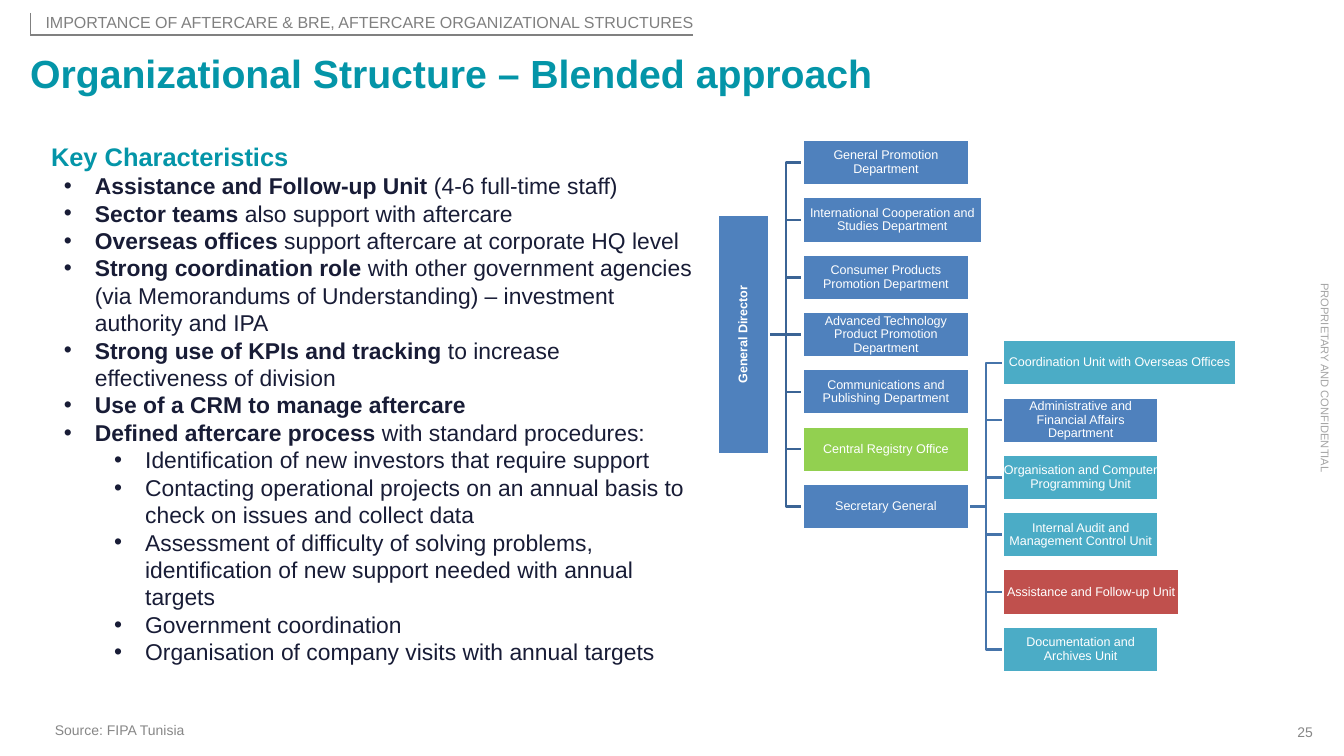
import pptx
import pptx.dml.color
import pptx.enum.shapes
import pptx.enum.text
import pptx.oxml
import pptx.oxml.ns
import pptx.util
from pptx.util import Inches

RGBColor = pptx.dml.color.RGBColor
Align = pptx.enum.text.PP_ALIGN
Anchor = pptx.enum.text.MSO_ANCHOR
Link = pptx.enum.shapes.MSO_CONNECTOR

TEAL = RGBColor(0x04, 0x95, 0xA8)
NAVY = RGBColor(0x18, 0x1C, 0x36)
GREY = RGBColor(0x80, 0x80, 0x80)
FOOT_GREY = RGBColor(0x87, 0x87, 0x87)
PALE_GREY = RGBColor(0xA5, 0xA5, 0xA5)
WHITE = RGBColor(0xFF, 0xFF, 0xFF)
BLUE = RGBColor(0x4F, 0x81, 0xBD)
GREEN = RGBColor(0x92, 0xD0, 0x50)
AQUA = RGBColor(0x4B, 0xAC, 0xC6)
RED = RGBColor(0xC0, 0x50, 0x4D)
DARK_LINK = RGBColor(0x3B, 0x64, 0x95)
LIGHT_LINK = RGBColor(0x46, 0x74, 0xAA)

TOP, BOX_HEIGHT = 1.53, 0.5
PITCH = (5.29 - TOP) / 6
DIRECTOR_HEIGHT = 2.63

CHARACTERISTICS = [
    ("Assistance and Follow-up Unit ", "(4-6 full-time staff)"),
    ("Sector teams ", "also support with aftercare"),
    ("Overseas offices ", "support aftercare at corporate HQ level"),
    ("Strong coordination role ", "with other government agencies (via Memorandums of "
     "Understanding) – investment authority and IPA"),
    ("Strong use of KPIs and tracking ", "to increase effectiveness of division"),
    ("Use of a CRM to manage aftercare", ""),
    ("Defined aftercare process ", "with standard procedures:"),
]
PROCEDURES = [
    "Identification of new investors that require support",
    "Contacting operational projects on an annual basis to check on issues and collect data",
    "Assessment of difficulty of solving problems, identification of new support needed "
    "with annual targets",
    "Government coordination",
    "Organisation of company visits with annual targets",
]
DEPARTMENTS = [
    ("General Promotion Department", 1.82, BLUE),
    ("International Cooperation and Studies Department", 1.96, BLUE),
    ("Consumer Products Promotion Department", 1.82, BLUE),
    ("Advanced Technology Product Promotion Department", 1.82, BLUE),
    ("Communications and Publishing Department", 1.82, BLUE),
    ("Central Registry Office", 1.82, GREEN),
    ("Secretary General", 1.82, BLUE),
]
UNITS = [
    ("Coordination Unit with Overseas Offices", 2.55, AQUA),
    ("Administrative and Financial Affairs Department", 1.7, BLUE),
    ("Organisation and Computer Programming Unit", 1.7, AQUA),
    ("Internal Audit and Management Control Unit", 1.7, AQUA),
    ("Assistance and Follow-up Unit", 1.93, RED),
    ("Documentation and Archives Unit", 1.7, AQUA),
]


class Painter:
    font = "Arial"

    def __init__(self, page):
        self.page = page

    def span(self, para, text, size, color, bold=False):
        span = para.add_run()
        span.text = text
        style = {"name": self.font, "size": pptx.util.Pt(size), "bold": bold}
        for name, value in style.items():
            setattr(span.font, name, value)
        span.font.color.rgb = color

    def frame(self, box, margins=(0, 0, 0, 0), anchor=Anchor.TOP):
        frame = box.text_frame
        left, top, right, bottom = map(Inches, margins)
        style = {"word_wrap": True, "auto_size": pptx.enum.text.MSO_AUTO_SIZE.NONE,
                 "vertical_anchor": anchor, "margin_left": left, "margin_top": top,
                 "margin_right": right, "margin_bottom": bottom}
        for name, value in style.items():
            setattr(frame, name, value)
        return frame

    def title(self, area, text):
        box = self.page.shapes.title
        for name, value in zip(("left", "top", "width", "height"), area):
            setattr(box, name, Inches(value))
        para = self.frame(box).paragraphs[0]
        para.alignment = Align.LEFT
        self.span(para, text, 30.9, TEAL, True)

    def text(self, area, text, size, color, align=Align.LEFT, rotation=0, **layout):
        box = self.page.shapes.add_textbox(*map(Inches, area))
        box.rotation = rotation
        para = self.frame(box, **layout).paragraphs[0]
        para.alignment = align
        self.span(para, text, size, color)

    def bullet(self, para, level, indent):
        para.level = level
        props = para._p.get_or_add_pPr()
        props.set("marL", str(Inches(indent)))
        props.set("indent", str(Inches(-0.34)))
        space = pptx.oxml.ns.nsdecls("a")
        for tag in (f'<a:buClr {space}><a:srgbClr val="{NAVY}"/></a:buClr>',
                    f'<a:buFont {space} typeface="{self.font}"/>',
                    f'<a:buChar {space} char="•"/>'):
            props.append(pptx.oxml.parse_xml(tag))

    def characteristics(self, area):
        box = self.page.shapes.add_textbox(*map(Inches, area))
        frame = self.frame(box, (0.1, 0.05, 0.1, 0.05))
        heading = frame.paragraphs[0]
        heading.line_spacing = 0.9
        self.span(heading, "Key Characteristics", 20, TEAL, True)
        for lead, rest in CHARACTERISTICS:
            para = frame.add_paragraph()
            self.bullet(para, 0, 0.48)
            self.span(para, lead, 18, NAVY, True)
            if rest:
                self.span(para, rest, 18, NAVY)
        for procedure in PROCEDURES:
            para = frame.add_paragraph()
            self.bullet(para, 1, 1.03)
            self.span(para, procedure, 18, NAVY)

    def block(self, area, text, color, upright=False):
        """Add a chart box; an upright one reads from bottom to top in bold."""
        box = self.page.shapes.add_shape(
            pptx.enum.shapes.MSO_SHAPE.RECTANGLE, *map(Inches, area))
        box.shadow.inherit = False
        box.fill.solid()
        box.fill.fore_color.rgb = color
        box.line.color.rgb = WHITE
        box.line.width = pptx.util.Pt(2)
        frame = self.frame(box, (0.01,) * 4, Anchor.MIDDLE)
        if upright:
            frame._txBody.bodyPr.set("vert", "vert270")
        para = frame.paragraphs[0]
        para.alignment = Align.CENTER
        para.line_spacing = 0.9
        self.span(para, text, 9.9, WHITE, upright)
        return box

    def column(self, left, top, entries):
        return [self.block((left, top + row * PITCH, width, BOX_HEIGHT), text, color)
                for row, (text, width, color) in enumerate(entries)]

    def line(self, ends, color, width, kind=Link.STRAIGHT):
        line = self.page.shapes.add_connector(kind, *map(Inches, ends))
        line.line.color.rgb = color
        line.line.width = pptx.util.Pt(width)
        line._element.spPr.append(pptx.oxml.parse_xml(
            f'<a:effectLst {pptx.oxml.ns.nsdecls("a")}/>'))
        return line

    def branch(self, parent, children, color):
        """Join a parent's right side to each child's left side, behind the boxes."""
        for child in children:
            offset = (child.top + child.height / 2) - (parent.top + parent.height / 2)
            level = abs(offset) < Inches(0.01)
            link = self.line((0, 0, 0, 0), color, 2, Link.STRAIGHT if level else Link.ELBOW)
            link.begin_connect(parent, 3)
            link.end_connect(child, 1)
            self.page.shapes._spTree.insert(2, link._element)


def main():
    deck = pptx.Presentation()
    deck.slide_width, deck.slide_height = Inches(14.7), Inches(8.27)
    painter = Painter(deck.slides.add_slide(deck.slide_layouts[5]))

    painter.title((0.33, 0.54, 14.19, 0.52), "Organizational Structure – Blended approach")
    painter.text((0.33, 0.14, 7.25, 0.24),
                 "IMPORTANCE OF AFTERCARE & BRE, AFTERCARE ORGANIZATIONAL STRUCTURES",
                 12.6, GREY, Align.RIGHT, margins=(0.04, 0, 0, 0.03))
    painter.line((7.58, 0.38, 0.33, 0.38), GREY, 1.5)
    painter.line((0.33, 0.14, 0.33, 0.38), GREY, 0.75)
    painter.characteristics((0.46, 1.53, 7.26, 5.63))

    director_top = TOP + 3 * PITCH + (BOX_HEIGHT - DIRECTOR_HEIGHT) / 2
    director = painter.block((7.85, director_top, 0.56, DIRECTOR_HEIGHT),
                             "General Director", BLUE, upright=True)
    departments = painter.column(8.78, TOP, DEPARTMENTS)
    units = painter.column(10.97, 3.72, UNITS)
    painter.branch(director, departments, DARK_LINK)
    painter.branch(departments[-1], units, LIGHT_LINK)

    painter.text((0.6, 7.89, 11.59, 0.19), "Source: FIPA Tunisia", 11, FOOT_GREY,
                 anchor=Anchor.BOTTOM)
    painter.text((14.06, 7.91, 0.3, 0.19), "25", 11, FOOT_GREY, Align.RIGHT)
    painter.text((13.43, 4.06, 2.13, 0.15), "PROPRIETARY AND CONFIDENTIAL", 8.8, PALE_GREY,
                 Align.CENTER, rotation=90)
    deck.save("out.pptx")


if __name__ == "__main__":
    main()
